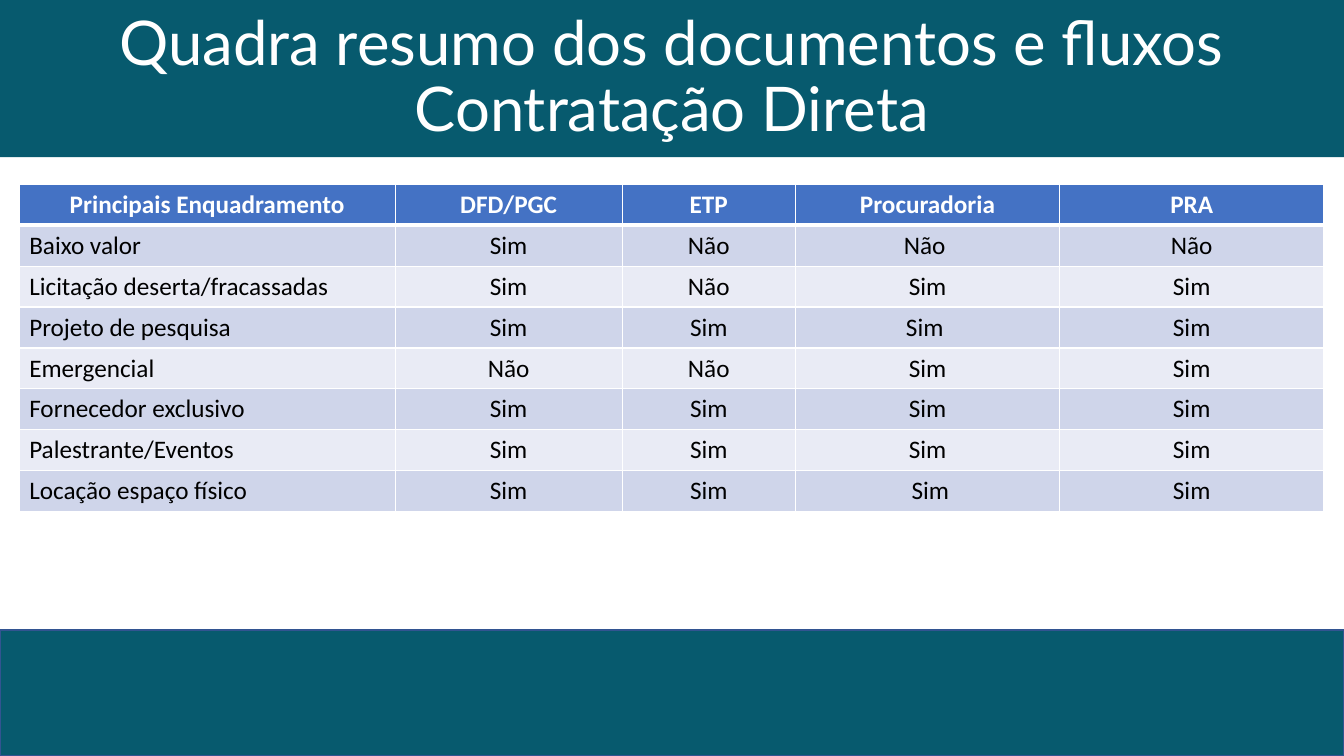
from dataclasses import dataclass

import pptx
import pptx.dml.color
import pptx.enum.shapes
import pptx.enum.text
import pptx.oxml
import pptx.oxml.ns
import pptx.util

Inches = pptx.util.Inches
Pt = pptx.util.Pt
Align = pptx.enum.text.PP_ALIGN

COLORS = {
    "teal": "075A6E",
    "footer_line": "325491",
    "header": "4472C4",
    "odd_row": "CFD5EA",
    "even_row": "E9EBF5",
    "white": "FFFFFF",
    "black": "000000",
}
SLIDE_WIDTH, SLIDE_HEIGHT = 13.33, 7.5
TITLE_LINES = ["Quadra resumo dos documentos e fluxos", "Contratação Direta"]
COLUMN_WIDTHS = [3.73, 2.25, 1.72, 2.62, 2.62]
ROW_HEIGHT = 0.405
ROWS = [
    ["Principais Enquadramento", "DFD/PGC", "ETP", "Procuradoria", "PRA"],
    ["Baixo valor", "Sim", "Não", "Não ", "Não"],
    ["Licitação deserta/fracassadas", "Sim", "Não", "Sim", "Sim"],
    ["Projeto de pesquisa", "Sim", "Sim", "Sim ", "Sim"],
    ["Emergencial", "Não", "Não", "Sim", "Sim"],
    ["Fornecedor exclusivo", "Sim", "Sim", "Sim", "Sim"],
    ["Palestrante/Eventos", "Sim", "Sim", "Sim", "Sim"],
    ["Locação espaço físico", "Sim", "Sim", " Sim", "Sim"],
]


@dataclass
class TextStyle:
    font: str
    size: float
    color: str
    bold: bool = False


@dataclass
class Band:
    top: float
    height: float
    line: str | None = None


TITLE_STYLE = TextStyle("Lato", 44, "white")
HEADER_STYLE = TextStyle("Calibri", 18, "white", bold=True)
BODY_STYLE = TextStyle("Calibri", 18, "black")
FOOTER_BAND = Band(6.25, 1.25, "footer_line")
TITLE_BAND = Band(0, 1.56)


def rgb(name: str) -> pptx.dml.color.RGBColor:
    return pptx.dml.color.RGBColor.from_string(COLORS[name])


def add_run(paragraph, text: str, style: TextStyle) -> None:
    run = paragraph.add_run()
    run.text = text
    run.font.name = style.font
    run.font.size = Pt(style.size)
    run.font.bold = style.bold
    run.font.color.rgb = rgb(style.color)


def add_band(slide, band: Band):
    """Draw a teal bar across the whole slide."""
    shape = slide.shapes.add_shape(
        pptx.enum.shapes.MSO_SHAPE.RECTANGLE,
        0, Inches(band.top), Inches(SLIDE_WIDTH), Inches(band.height))
    shape.shadow.inherit = False
    shape.fill.solid()
    shape.fill.fore_color.rgb = rgb("teal")
    if band.line:
        shape.line.color.rgb = rgb(band.line)
        shape.line.width = Pt(1)
    else:
        shape.line.fill.background()
    return shape


def add_title(slide) -> None:
    frame = add_band(slide, TITLE_BAND).text_frame
    frame.word_wrap = True
    frame.vertical_anchor = pptx.enum.text.MSO_ANCHOR.MIDDLE
    paragraph = frame.paragraphs[0]
    paragraph.alignment = Align.CENTER
    paragraph.line_spacing = 0.9
    for index, line in enumerate(TITLE_LINES):
        if index:
            paragraph.add_line_break()
        add_run(paragraph, line, TITLE_STYLE)


def set_borders(cell, widths: dict[str, float]) -> None:
    """Give the cell white borders; widths in points, keyed L, R, T, B."""
    properties = cell._tc.get_or_add_tcPr()
    for position, (side, width) in enumerate(widths.items()):
        border = pptx.oxml.parse_xml(
            f'<a:ln{side} {pptx.oxml.ns.nsdecls("a")} w="{Pt(width)}">'
            f'<a:solidFill><a:srgbClr val="{COLORS["white"]}"/></a:solidFill>'
            f'</a:ln{side}>')
        properties.insert(position, border)


def fill_cell(cell, text: str, row: int, column: int) -> None:
    is_header = row == 0
    color = "header" if is_header else "odd_row" if row % 2 else "even_row"
    cell.fill.solid()
    cell.fill.fore_color.rgb = rgb(color)
    set_borders(cell, {"L": 1, "R": 1,
                       "T": 3 if row == 1 else 1,
                       "B": 3 if is_header else 1})
    paragraph = cell.text_frame.paragraphs[0]
    paragraph.alignment = Align.CENTER if is_header or column else Align.LEFT
    add_run(paragraph, text, HEADER_STYLE if is_header else BODY_STYLE)


def add_summary_table(slide) -> None:
    table = slide.shapes.add_table(
        len(ROWS), len(COLUMN_WIDTHS), Inches(0.19), Inches(1.83),
        Inches(sum(COLUMN_WIDTHS)), Inches(ROW_HEIGHT * len(ROWS))).table
    for column, width in zip(table.columns, COLUMN_WIDTHS):
        column.width = Inches(width)
    for row, texts in enumerate(ROWS):
        table.rows[row].height = Inches(ROW_HEIGHT)
        for column, text in enumerate(texts):
            fill_cell(table.cell(row, column), text, row, column)


def main() -> None:
    presentation = pptx.Presentation()
    presentation.slide_width = Inches(SLIDE_WIDTH)
    presentation.slide_height = Inches(SLIDE_HEIGHT)
    slide = presentation.slides.add_slide(presentation.slide_layouts[6])
    add_band(slide, FOOTER_BAND)
    add_title(slide)
    add_summary_table(slide)
    presentation.save("out.pptx")


if __name__ == "__main__":
    main()
